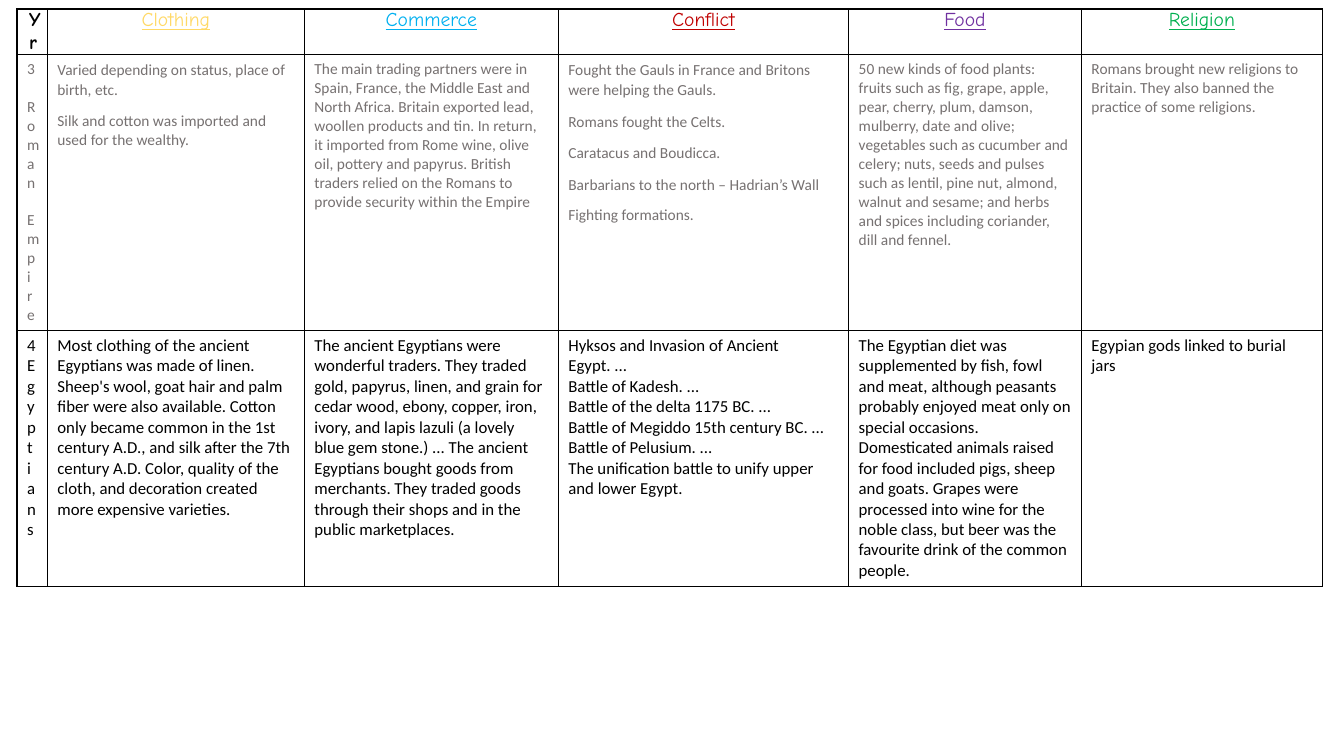
from dataclasses import dataclass

from lxml import etree
from pptx import Presentation
from pptx.dml.color import RGBColor
from pptx.enum.text import PP_ALIGN
from pptx.oxml.ns import qn
from pptx.util import Pt

LEFT, CENTER = PP_ALIGN.LEFT, PP_ALIGN.CENTER
BLANK_LAYOUT = 6
COLORS = {
    "black": "000000", "grey": "767171", "yellow": "FFD966", "blue": "00B0F0",
    "red": "C00000", "purple": "7030A0", "green": "00B050",
}
COLUMN_WIDTHS = [21.6, 183.6, 181.4, 207.4, 166.3, 172.1]


@dataclass
class Para:
    text: str
    before: float = 0
    after: float = 0
    line: float = 1


@dataclass
class Style:
    size: float
    color: str
    font: str = "Calibri"
    bold: bool = False
    underline: bool = False
    align: PP_ALIGN = LEFT
    side_margin: float = 7.2
    top_margin: float = 3.6


@dataclass
class Row:
    height: float
    styles: list[Style]
    cells: list[list[Para]]


def loose(text: str) -> Para:
    return Para(text, after=8, line=1.07)


def heading(color: str, bold: bool = False, underline: bool = True) -> Style:
    return Style(14, color, "Comic Neue", bold, underline, CENTER, 8.64, 0)


def add_borders(cell) -> None:
    tc_pr = cell._tc.get_or_add_tcPr()
    for side in ("a:lnL", "a:lnR", "a:lnT", "a:lnB"):
        ln = etree.SubElement(tc_pr, qn(side), w=str(Pt(1)))
        fill = etree.SubElement(ln, qn("a:solidFill"))
        etree.SubElement(fill, qn("a:srgbClr"), val=COLORS["black"])


def fill_cell(cell, paras: list[Para], style: Style) -> None:
    add_borders(cell)
    cell.fill.background()
    cell.margin_left = cell.margin_right = Pt(style.side_margin)
    cell.margin_top = cell.margin_bottom = Pt(style.top_margin)
    tf = cell.text_frame
    for i, para in enumerate(paras):
        p = tf.add_paragraph() if i else tf.paragraphs[0]
        p.alignment = style.align
        p.line_spacing = para.line
        p.space_before, p.space_after = Pt(para.before), Pt(para.after)
        r = p.add_run()
        r.text = para.text
        r.font.name, r.font.size = style.font, Pt(style.size)
        r.font.bold, r.font.underline = style.bold, style.underline
        r.font.color.rgb = RGBColor.from_string(COLORS[style.color])


# Table content
HEADINGS = {"Clothing": "yellow", "Commerce": "blue", "Conflict": "red",
            "Food": "purple", "Religion": "green"}

ROMANS = [
    [Para("3"), Para("Roman", before=13.4), Para("Empi re", before=13.4)],
    [loose("Varied depending on status, place of birth, etc."),
     Para("Silk and cotton was imported and used for the wealthy.")],
    [Para("The main trading partners were in Spain, France, the Middle East and "
          "North Africa. Britain exported lead, woollen products and tin. In return, "
          "it imported from Rome wine, olive oil, pottery and papyrus. British "
          "traders relied on the Romans to provide security within the Empire")],
    [loose("Fought the Gauls in France and Britons were helping the Gauls."),
     loose("Romans fought the Celts."),
     loose("Caratacus and Boudicca."),
     loose("Barbarians to the north – Hadrian’s Wall"),
     Para("Fighting formations.")],
    [Para("50 new kinds of food plants: fruits such as fig, grape, apple, pear, "
          "cherry, plum, damson, mulberry, date and olive; vegetables such as "
          "cucumber and celery; nuts, seeds and pulses such as lentil, pine nut, "
          "almond, walnut and sesame; and herbs and spices including coriander, "
          "dill and fennel.")],
    [Para("Romans brought new religions to Britain. They also banned the practice "
          "of some religions.")],
]

EGYPTIANS = [
    [Para("4"), Para("Egypt i a ns")],
    [Para("Most clothing of the ancient Egyptians was made of linen. Sheep's wool, "
          "goat hair and palm fiber were also available. Cotton only became common "
          "in the 1st century A.D., and silk after the 7th century A.D. Color, "
          "quality of the cloth, and decoration created more expensive varieties.")],
    [Para("The ancient Egyptians were wonderful traders. They traded gold, papyrus, "
          "linen, and grain for cedar wood, ebony, copper, iron, ivory, and lapis "
          "lazuli (a lovely blue gem stone.) ... The ancient Egyptians bought goods "
          "from merchants. They traded goods through their shops and in the public "
          "marketplaces.")],
    [Para("Hyksos and Invasion of Ancient Egypt. ..."),
     Para("Battle of Kadesh. ..."),
     Para("Battle of the delta 1175 BC. ..."),
     Para("Battle of Megiddo 15th century BC. ..."),
     Para("Battle of Pelusium. ..."),
     Para("The unification battle to unify upper and lower Egypt.")],
    [Para("The Egyptian diet was supplemented by fish, fowl and meat, although "
          "peasants probably enjoyed meat only on special occasions. Domesticated "
          "animals raised for food included pigs, sheep and goats. Grapes were "
          "processed into wine for the noble class, but beer was the favourite "
          "drink of the common people.")],
    [Para("Egypian gods linked to burial jars")],
]

ROWS = [
    Row(32.4,
        [heading("black", bold=True, underline=False)]
        + [heading(color) for color in HEADINGS.values()],
        [[Para(text)] for text in ("Yr", *HEADINGS)]),
    Row(197, [Style(11, "grey")] * len(ROMANS), ROMANS),
    Row(183, [Style(12, "black")] * len(EGYPTIANS), EGYPTIANS),
]


def main() -> None:
    prs = Presentation()
    prs.slide_width, prs.slide_height = Pt(960), Pt(540)
    s = prs.slides.add_slide(prs.slide_layouts[BLANK_LAYOUT])

    # Table grid
    table = s.shapes.add_table(
        len(ROWS), len(COLUMN_WIDTHS), Pt(12.2), Pt(6.5),
        Pt(sum(COLUMN_WIDTHS)), Pt(sum(row.height for row in ROWS))).table
    table.first_row = table.horz_banding = False
    for column, width in zip(table.columns, COLUMN_WIDTHS):
        column.width = Pt(width)

    # Table cells
    for i, row in enumerate(ROWS):
        table.rows[i].height = Pt(row.height)
        for j, (paras, style) in enumerate(zip(row.cells, row.styles)):
            fill_cell(table.cell(i, j), paras, style)

    prs.save("out.pptx")


if __name__ == "__main__":
    main()
